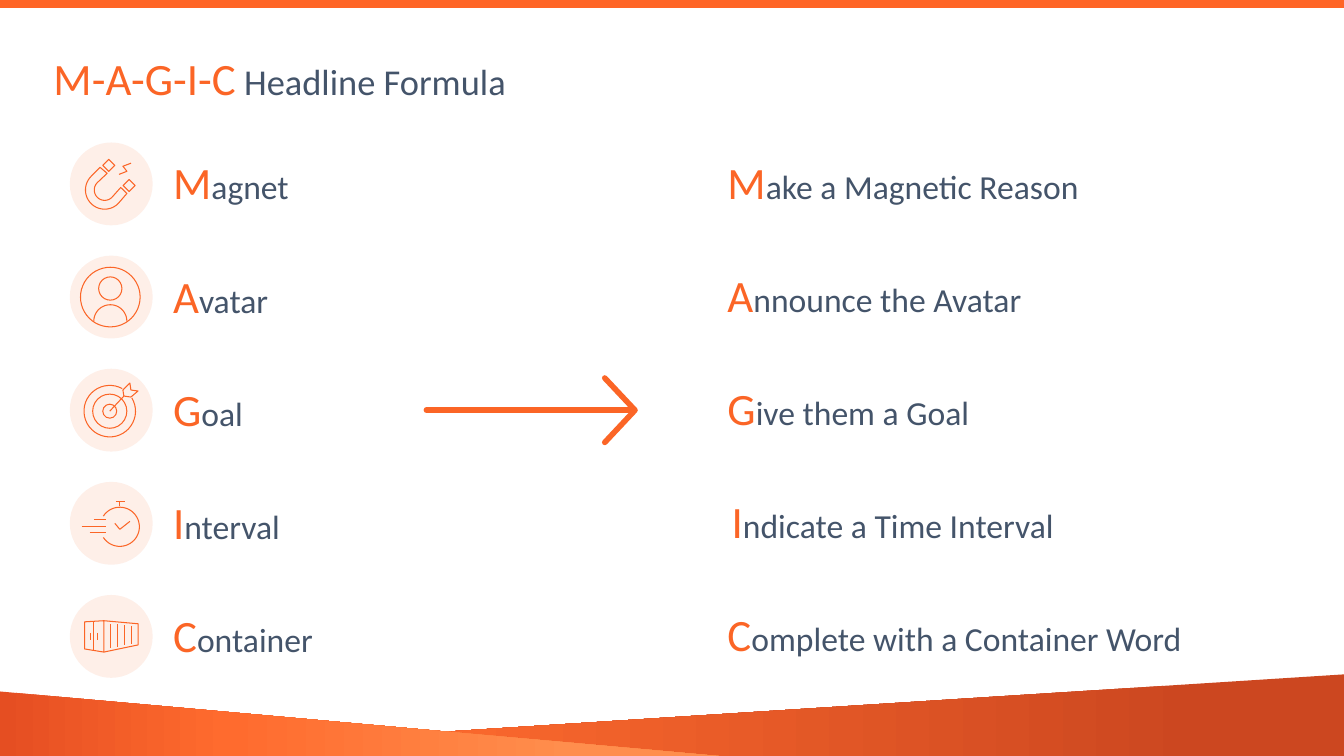
import math

import copy
import lxml.etree
import pptx
import pptx.dml.color
import pptx.enum.shapes
import pptx.enum.text
import pptx.oxml.ns
import pptx.util

Pt = pptx.util.Pt
qn = pptx.oxml.ns.qn
SHAPE = pptx.enum.shapes.MSO_SHAPE

COLORS = {"accent": "FB6526", "text": "44546A", "bar": "FF6526"}
FONT = "Calibri"
TITLE = ("M-A-G-I-C", " Headline Formula")
# initial, rest of keyword, rest of sentence, sentence left, sentence width
ROWS = [
    ("M", "agnet", "ake a Magnetic Reason", 512.6, 307.4),
    ("A", "vatar", "nnounce the Avatar", 512.6, 307.4),
    ("G", "oal", "ive them a Goal", 512.6, 225.4),
    ("I", "nterval", "ndicate a Time Interval", 515.5, 288),
    ("C", "ontainer", "omplete with a Container Word", 512.6, 400.3),
]
# left, top, width, height, flipped, gradient stops
FOOTER = [
    (0, 481.7, 960, 61.2, True, [(0.11, "CC4720"), (0.73, "FF6B2E"), (1, "FF8E4D")]),
    (0, 493.9, 545.8, 49, False, [(0, "E54E22"), (0.3, "FF6B2E"), (0.75, "FF8E4D")]),
]
KEYWORD_LEFT, KEYWORD_WIDTH, TEXT_TOP, TEXT_HEIGHT = 116.6, 136.8, 107.3, 46.1
KEYWORD_PITCH, SENTENCE_PITCH = 80.9, 80.6
ICON_X, ICON_Y, ICON_PITCH, BADGE_RADIUS = 79.5, 131.4, 80.8, 29.6


def arc(cx, cy, radius, start, end, steps=40):
    """Points along a circle, angles in degrees, clockwise from the right."""
    angles = [math.radians(start + (end - start) * i / steps) for i in range(steps + 1)]
    return [(cx + radius * math.cos(a), cy + radius * math.sin(a)) for a in angles]


def diamond(cx, cy, r):
    return [(cx, cy - r), (cx + r, cy), (cx, cy + r), (cx - r, cy)]


# Each icon: rings (cx, cy, radius), closed outlines and open strokes,
# measured from the centre of its badge.
ICONS = [
    {  # magnet
        "closed": [
            diamond(-1.8, -13.3, 4.3),
            diamond(12.7, 1.1, 4.3),
            arc(-4.7, 4.3, 13.7, 45, 225) + [(-8, -11.9), (-2.9, -7.6)]
            + arc(-4.7, 4.3, 7.4, 225, 45) + [(6.8, 2.5), (11.2, 6.8)],
        ],
        "open": [[(5.5, -6.8), (11.2, -9), (8.3, -12.6), (14.1, -14.8)]],
    },
    {  # avatar
        "rings": [(-0.7, 0, 21.3), (-0.7, -6.1, 8.3)],
        "open": [arc(-0.7, 17.3, 11.8, 180, 360)],
    },
    {  # target
        "rings": [(-1.1, 0.7, 5), (-1.1, 0.7, 12.2)],
        "closed": [[(9, -10.1), (8.3, -14.4), (13.3, -19.4),
                    (14, -14.4), (19.1, -13.7), (14, -9.4)]],
        "open": [arc(-1.1, 0.7, 18.4, -31, 299), [(-1.1, 0.7), (9, -10.1)]],
    },
    {  # stopwatch
        "open": [
            arc(6.1, 2.5, 14, 213, 507),
            [(6.1, -12.2), (6.1, -15.8)],
            [(3.2, -15.8), (9.7, -15.8)],
            [(2.5, 0), (6.1, 4.3), (13.3, -1.4)],
        ] + [[(x, y), (-3.9, y)] for x, y in [(-12.5, -2.5), (-21.2, 2.2), (-15.4, 6.9)]],
    },
    {  # container
        "closed": [[(-19, -10.4), (-5.3, -11.2), (-5.3, 11.2), (-19, 9)]],
        "open": [
            [(-5.3, -11.2), (19.1, -9), (19.1, 6.1), (-5.3, 11.2)],
            [(-12.5, -10.4), (-12.5, 9.7)],
        ] + [[(x, -2.5), (x, 2.5)] for x in (-14.7, -9.7)]
        + [[(5 * k - 0.3, 0.45 * k - 9), (5 * k - 0.3, 8.3 - 0.95 * k)] for k in range(4)],
    },
]
ARROW = [[(304.6, 293), (452.3, 293)], [(432, 270), (453.6, 293), (432, 316)]]


def rgb(value):
    return pptx.dml.color.RGBColor.from_string(value)


def set_line(shape, color, width):
    shape.line.color.rgb = rgb(color)
    shape.line.width = Pt(width)


def add_stroke(s, points, width, color=COLORS["accent"], dx=0, dy=0, close=False):
    """Connector for two points, unfilled freeform for more."""
    pts = [(Pt(x + dx), Pt(y + dy)) for x, y in points]
    if len(pts) == 2:
        line = pptx.enum.shapes.MSO_CONNECTOR.STRAIGHT
        shape = s.shapes.add_connector(line, *pts[0], *pts[1])
        lxml.etree.SubElement(shape.element.spPr, qn("a:effectLst"))
    else:
        builder = s.shapes.build_freeform(*pts[0])
        builder.add_line_segments(pts[1:], close=close)
        shape = builder.convert_to_shape()
        shape.shadow.inherit = False
        shape.fill.background()
    set_line(shape, color, width)
    return shape


def add_oval(s, cx, cy, radius):
    box = (cx - radius, cy - radius, 2 * radius, 2 * radius)
    shape = s.shapes.add_shape(SHAPE.OVAL, *map(Pt, box))
    shape.shadow.inherit = False
    return shape


def add_icon(s, icon, cx, cy):
    badge = add_oval(s, cx, cy, BADGE_RADIUS)
    badge.fill.solid()
    badge.fill.fore_color.rgb = rgb(COLORS["accent"])
    badge.line.fill.background()
    tint = badge.element.spPr.find(".//" + qn("a:srgbClr"))
    lxml.etree.SubElement(tint, qn("a:alpha")).set("val", "10000")
    for x, y, radius in icon.get("rings", []):
        ring = add_oval(s, cx + x, cy + y, radius)
        ring.fill.background()
        set_line(ring, COLORS["accent"], 0.75)
    for kind in ("closed", "open"):
        for points in icon.get(kind, []):
            add_stroke(s, points, 0.75, dx=cx, dy=cy, close=kind == "closed")


def add_footer(s, left, top, width, height, flipped, stops):
    shape = s.shapes.add_shape(SHAPE.RIGHT_TRIANGLE, *map(Pt, (left, top, width, height)))
    shape.shadow.inherit = False
    shape.line.fill.background()
    shape.fill.gradient()
    shape.fill.gradient_angle = 0
    stop_list = shape.element.spPr.find(".//" + qn("a:gsLst"))
    stop_list.append(copy.deepcopy(stop_list[0]))
    for stop, (position, color) in zip(shape.fill.gradient_stops, stops):
        stop.position = position
        stop.color.rgb = rgb(color)
    if flipped:
        shape.element.spPr.find(qn("a:xfrm")).set("flipH", "1")


def write(tf, lead, rest, rest_size):
    """Large accent lead followed by smaller text."""
    frame = {"word_wrap": True, "auto_size": pptx.enum.text.MSO_AUTO_SIZE.NONE,
             "vertical_anchor": pptx.enum.text.MSO_ANCHOR.TOP}
    for name, value in frame.items():
        setattr(tf, name, value)
    p = tf.paragraphs[0]
    p.alignment = pptx.enum.text.PP_ALIGN.LEFT
    for text, size, color in [(lead, 32, "accent"), (rest, rest_size, "text")]:
        r = p.add_run()
        r.text = text
        for name, value in {"name": FONT, "size": Pt(size)}.items():
            setattr(r.font, name, value)
        r.font.color.rgb = rgb(COLORS[color])


def add_label(s, left, top, width, lead, rest):
    box = s.shapes.add_textbox(*map(Pt, (left, top, width, TEXT_HEIGHT)))
    write(box.text_frame, lead, rest, 24)


def main():
    prs = pptx.Presentation()
    prs.slide_width, prs.slide_height = Pt(960), Pt(540)
    s = prs.slides.add_slide(prs.slide_layouts[5])
    for part in FOOTER:
        add_footer(s, *part)
    add_stroke(s, [(0, 3), (960, 3)], 6, COLORS["bar"])
    for points in ARROW:
        stroke = add_stroke(s, points, 4)
        ln = stroke.element.spPr.find(qn("a:ln"))
        ln.set("cap", "rnd")
        lxml.etree.SubElement(ln, qn("a:round"))

    title = s.shapes.title
    title.left, title.top, title.width, title.height = map(Pt, (31, 32.4, 495.4, TEXT_HEIGHT))
    write(title.text_frame, *TITLE, 26)
    for i, (initial, keyword, sentence, left, width) in enumerate(ROWS):
        add_icon(s, ICONS[i], ICON_X, ICON_Y + i * ICON_PITCH)
        add_label(s, KEYWORD_LEFT, TEXT_TOP + i * KEYWORD_PITCH, KEYWORD_WIDTH, initial, keyword)
        add_label(s, left, TEXT_TOP + i * SENTENCE_PITCH, width, initial, sentence)
    prs.save("out.pptx")


if __name__ == "__main__":
    main()
